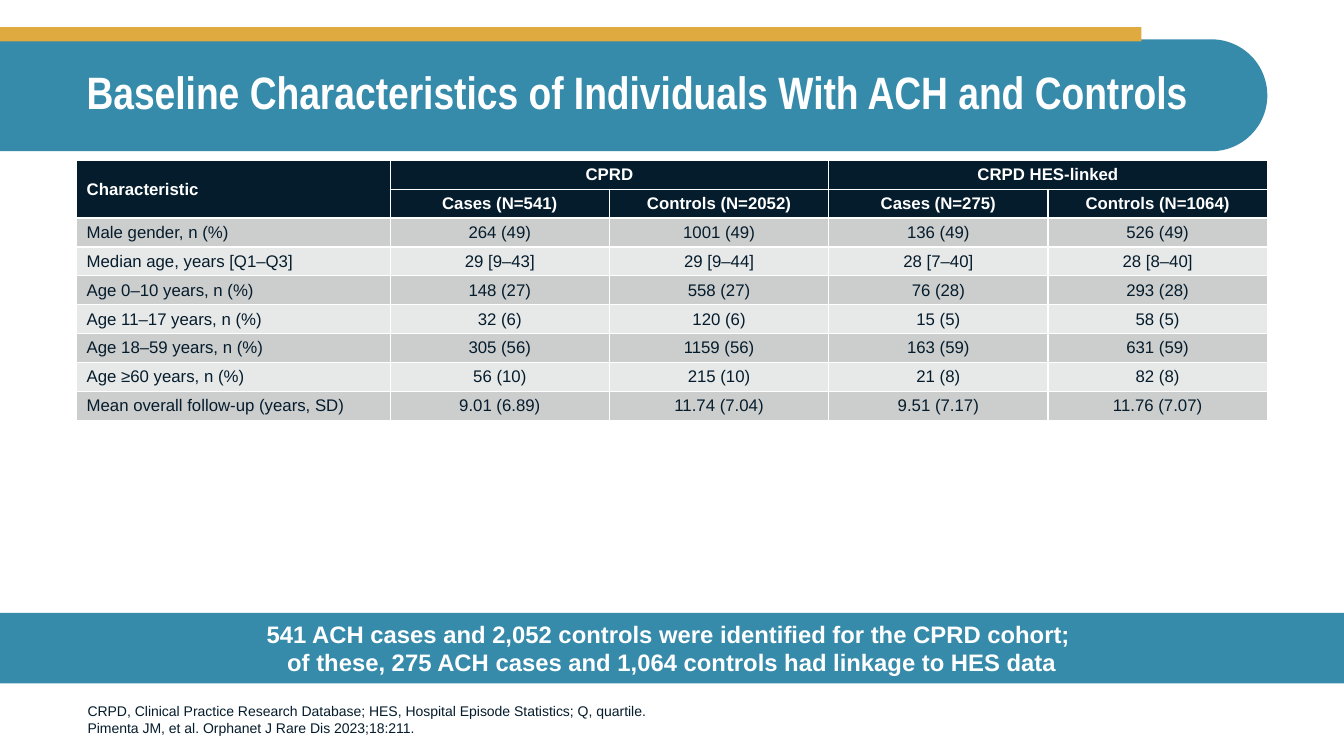
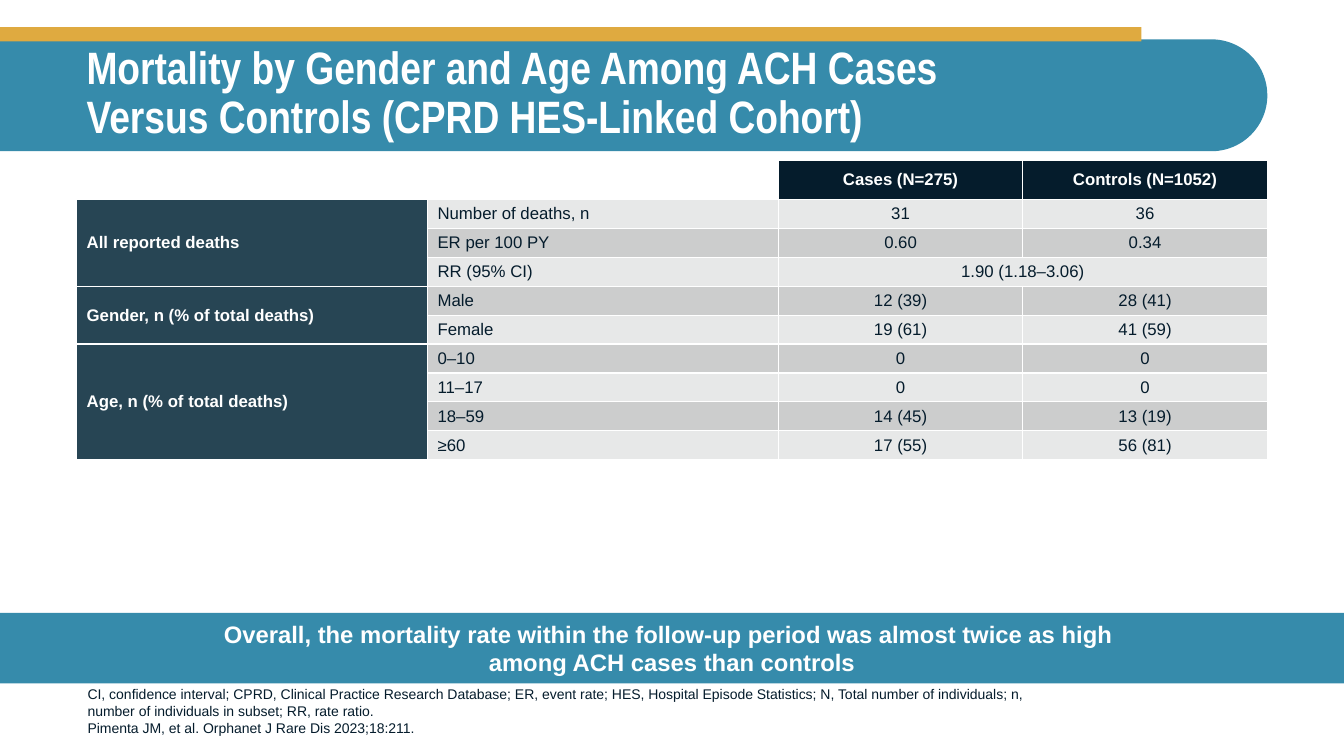
"""Build two slides on baseline traits and mortality in ACH cases and controls."""
from dataclasses import dataclass

from lxml import etree
from pptx import Presentation
from pptx.dml.color import RGBColor
from pptx.enum.shapes import MSO_SHAPE
from pptx.enum.text import MSO_ANCHOR, PP_ALIGN
from pptx.oxml.ns import qn
from pptx.util import Inches, Pt

RECT = MSO_SHAPE.RECTANGLE
ROUND = MSO_SHAPE.ROUND_2_SAME_RECTANGLE
LEFT, CENTER = PP_ALIGN.LEFT, PP_ALIGN.CENTER
MIDDLE, BOTTOM = MSO_ANCHOR.MIDDLE, MSO_ANCHOR.BOTTOM


@dataclass(frozen=True)
class Theme:
    """Colours, fonts, type sizes and shared measures in inches."""
    white: str = "FFFFFF"
    ink: str = "051C2C"
    side: str = "274554"
    teal: str = "368BAB"
    gold: str = "DFAA40"
    bands: tuple = ("CCCDCD", "E7E8E8")
    font: str = "Arial"
    narrow: str = "Arial Narrow"
    title: float = 32.4
    claim: float = 17
    cell: float = 12
    note: float = 10
    wide: float = 13.33
    edge: float = 0.76
    span: float = 11.81
    row: float = 2.58 / 9


THEME = Theme()


def color(code):
    """Turn a hex code into a colour."""
    return RGBColor.from_string(code)


def write(frame, text, size, ink=THEME.ink, bold=False, align=LEFT,
          font=THEME.font, lead=1.0):
    """Fill a text frame; \\n starts a paragraph and \\v breaks a line."""
    frame.word_wrap = True
    frame.text = text
    for para in frame.paragraphs:
        para.alignment = align
        para.line_spacing = lead
        for run in para.runs:
            run.font.size = Pt(size)
            run.font.name = font
            run.font.bold = bold
            run.font.color.rgb = color(ink)
        for gap in para._p.findall(qn("a:br")):
            etree.SubElement(gap, qn("a:rPr"), sz=str(int(size * 100)))


def block(slide, kind, box, fill):
    """Add a flat filled shape without an outline."""
    shape = slide.shapes.add_shape(kind, *map(Inches, box))
    shape.shadow.inherit = False
    shape.fill.solid()
    shape.fill.fore_color.rgb = color(fill)
    shape.line.fill.background()
    return shape


def label(slide, box, text, anchor, **style):
    """Add a text box."""
    frame = slide.shapes.add_textbox(*map(Inches, box)).text_frame
    frame.vertical_anchor = anchor
    write(frame, text, **style)


def header(slide, text):
    """Draw the rounded title band, the gold strip and the title."""
    long, high, top = 12.57, 1.11, 0.39
    band = block(slide, ROUND, ((long - high) / 2, top + (high - long) / 2,
                                high, long), THEME.teal)
    band.rotation = 270
    band.adjustments[0] = 0
    band.adjustments[1] = 0.5
    block(slide, RECT, (0, 0.27, 11.32, 0.14), THEME.gold)
    label(slide, (THEME.edge, top, THEME.span, 1.1), text, MIDDLE,
          size=THEME.title, ink=THEME.white, bold=True,
          font=THEME.narrow, lead=0.9)


def footer(slide, claim, note):
    """Draw the key message band and the notes under it."""
    label(slide, (0.77, 6.79, 9.88, 0.56), note, BOTTOM, size=THEME.note)
    band = block(slide, RECT, (0, 6.08, THEME.wide, 0.7), THEME.teal)
    frame = band.text_frame
    frame.margin_left = frame.margin_right = Inches(0.79)
    frame.vertical_anchor = MIDDLE
    write(frame, claim, THEME.claim, ink=THEME.white, bold=True, align=CENTER)


def border(cell):
    """Give a cell thin white edges."""
    props = cell._tc.get_or_add_tcPr()
    for place, side in enumerate(("lnL", "lnR", "lnT", "lnB")):
        line = etree.Element(qn("a:" + side), w=str(Pt(1)))
        fill = etree.SubElement(line, qn("a:solidFill"))
        etree.SubElement(fill, qn("a:srgbClr"), val=THEME.white)
        props.insert(place, line)


def paint(cell, text, fill, strong, align):
    """Style one table cell and set its text."""
    cell.fill.solid()
    cell.fill.fore_color.rgb = color(fill)
    border(cell)
    cell.vertical_anchor = MIDDLE
    cell.margin_top = cell.margin_bottom = Inches(0.04)
    if text:
        write(cell.text_frame, text, THEME.cell, bold=strong, align=align,
              ink=THEME.white if strong else THEME.ink)


def grid(slide, rows, first, heads, sides, merges, top=THEME.row):
    """Add a table with header rows, side columns and merged cells."""
    count, lefts = len(rows[0]), sides + 1
    rest = (THEME.span - first * lefts) / (count - lefts)
    highs = [top] + [THEME.row] * (len(rows) - 1)
    box = (THEME.edge, 1.59, THEME.span, sum(highs))
    table = slide.shapes.add_table(len(rows), count, *map(Inches, box)).table
    table.first_row = table.horz_banding = False
    for c, column in enumerate(table.columns):
        column.width = Inches(first if c < lefts else rest)
    for r, (row, high) in enumerate(zip(rows, highs)):
        table.rows[r].height = Inches(high)
        for c, text in enumerate(row):
            if r < heads:
                fill = THEME.ink if text else THEME.white
            else:
                fill = THEME.side if c < sides else THEME.bands[r % 2]
            paint(table.cell(r, c), text, fill, r < heads or c < sides,
                  LEFT if c < lefts else CENTER)
    for r, c, down, right in merges:
        table.cell(r, c).merge(table.cell(r + down - 1, c + right - 1))


def traits(slide):
    """Build the slide on baseline characteristics."""
    header(slide, "Baseline Characteristics of Individuals With ACH and Controls")
    footer(slide,
           "541 ACH cases and 2,052 controls were identified for the CPRD cohort; "
           "\vof these, 275 ACH cases and 1,064 controls had linkage to HES data",
           "CRPD, Clinical Practice Research Database; HES, Hospital Episode "
           "Statistics; Q, quartile.\n"
           "Pimenta JM, et al. Orphanet J Rare Dis 2023;18:211.")
    rows = [
        ("Characteristic", "CPRD", "", "CRPD HES-linked", ""),
        ("", "Cases (N=541)", "Controls (N=2052)", "Cases (N=275)",
         "Controls (N=1064)"),
        ("Male gender, n (%)", "264 (49)", "1001 (49)", "136 (49)", "526 (49)"),
        ("Median age, years [Q1–Q3]", "29 [9–43]", "29 [9–44]", "28 [7–40]",
         "28 [8–40]"),
        ("Age 0–10 years, n (%)", "148 (27)", "558 (27)", "76 (28)", "293 (28)"),
        ("Age 11–17 years, n (%)", "32 (6)", "120 (6)", "15 (5)", "58 (5)"),
        ("Age 18–59 years, n (%)", "305 (56)", "1159 (56)", "163 (59)",
         "631 (59)"),
        ("Age ≥60 years, n (%)", "56 (10)", "215 (10)", "21 (8)", "82 (8)"),
        ("Mean overall follow-up (years, SD)", "9.01 (6.89)", "11.74 (7.04)",
         "9.51 (7.17)", "11.76 (7.07)"),
    ]
    grid(slide, rows, first=3.11, heads=2, sides=0,
         merges=[(0, 0, 2, 1), (0, 1, 1, 2), (0, 3, 1, 2)])


def deaths(slide):
    """Build the slide on mortality by gender and age."""
    header(slide, "Mortality by Gender and Age Among ACH Cases "
                  "\vVersus Controls (CPRD HES-Linked Cohort)")
    footer(slide,
           "Overall, the mortality rate within the follow-up period was almost "
           "twice as high \vamong ACH cases than controls",
           "CI, confidence interval; CPRD, Clinical Practice Research Database; "
           "ER, event rate; HES, Hospital Episode Statistics; N, Total number of "
           "individuals; n, number of individuals in subset; RR, rate ratio.\n"
           "Pimenta JM, et al. Orphanet J Rare Dis 2023;18:211.")
    rows = [
        ("", "", "Cases (N=275)", "Controls (N=1052)"),
        ("All reported deaths", "Number of deaths, n", "31", "36"),
        ("", "ER per 100 PY", "0.60", "0.34"),
        ("", "RR (95% CI)", "1.90 (1.18–3.06)", ""),
        ("Gender, n (% of total deaths)", "Male", "12 (39)", "28 (41)"),
        ("", "Female", "19 (61)", "41 (59)"),
        ("Age, n (% of total deaths)", "0–10", "0", "0"),
        ("", "11–17", "0", "0"),
        ("", "18–59", "14 (45)", "13 (19)"),
        ("", "≥60", "17 (55)", "56 (81)"),
    ]
    grid(slide, rows, first=3.48, heads=1, sides=1, top=0.39,
         merges=[(1, 0, 3, 1), (3, 2, 1, 2), (4, 0, 2, 1), (6, 0, 4, 1)])


def main():
    """Build the deck and save it."""
    deck = Presentation()
    deck.slide_width, deck.slide_height = Inches(THEME.wide), Inches(7.5)
    for build in (traits, deaths):
        build(deck.slides.add_slide(deck.slide_layouts[6]))
    deck.save("out.pptx")


if __name__ == "__main__":
    main()
